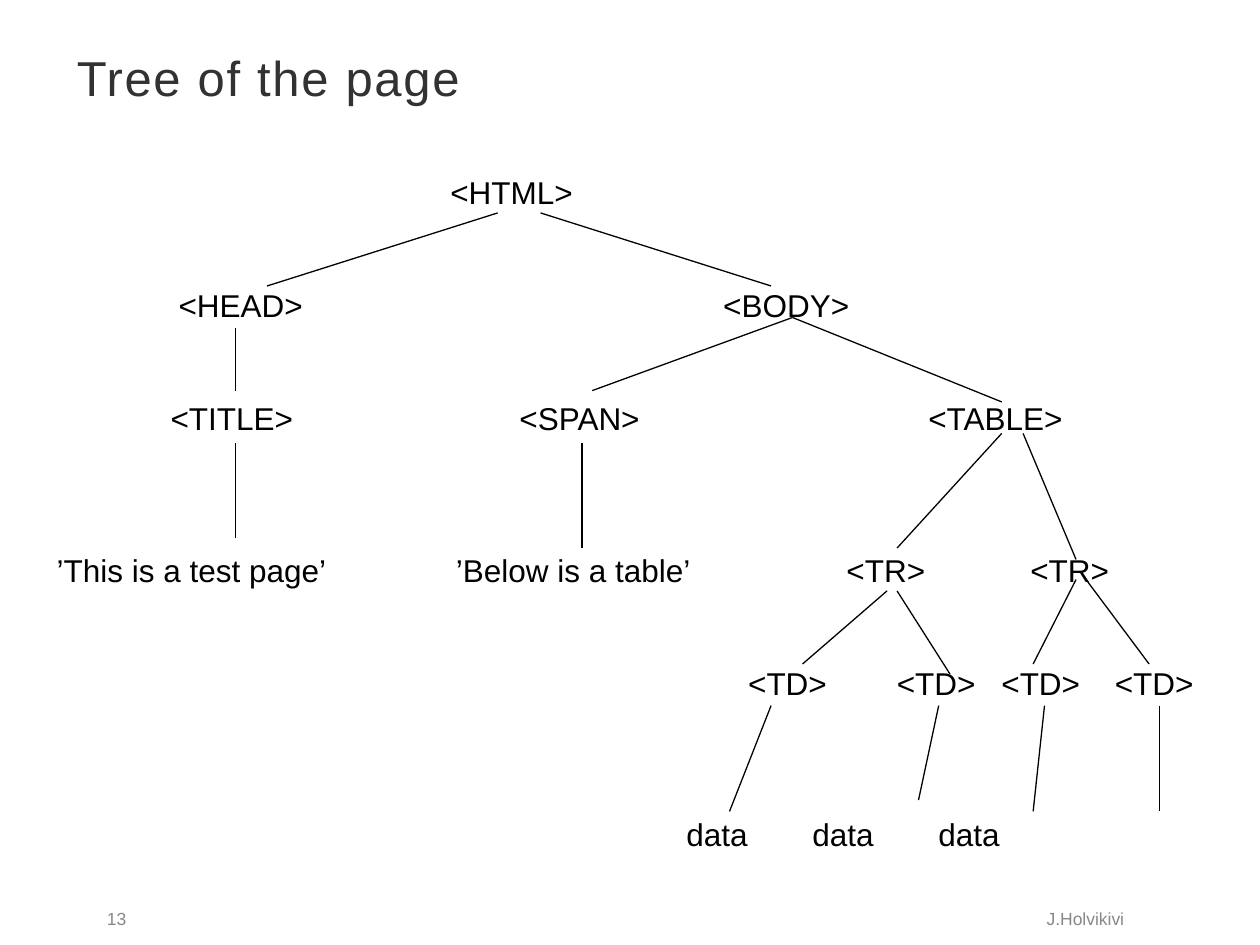
from pptx import Presentation
from pptx.dml.color import RGBColor
from pptx.enum.shapes import MSO_CONNECTOR
from pptx.enum.text import MSO_ANCHOR, PP_ALIGN
from pptx.oxml.ns import qn
from pptx.util import Inches, Pt
from lxml import etree


def paint(hue):
    """Turn a hex string into a colour."""
    return RGBColor.from_string(hue)


def write(box, text, size, hue, align):
    frame = box.text_frame
    frame.text = text
    frame.word_wrap = True
    para = frame.paragraphs[0]
    para.alignment = align
    para.font.name = "Arial"
    para.font.size = Pt(size)
    para.font.color.rgb = paint(hue)
    return frame


deck = Presentation()
deck.slide_width, deck.slide_height = Inches(10), Inches(7.5)
slide = deck.slides.add_slide(deck.slide_layouts[5])
shapes = slide.shapes

# Title
title = shapes.title
title.left, title.top = Inches(0.51), Inches(0.28)
title.width, title.height = Inches(9), Inches(1.25)
frame = write(title, "Tree of the page", 28, "323232", PP_ALIGN.LEFT)
frame.vertical_anchor = MSO_ANCHOR.TOP
frame.margin_top = Inches(0.1)
frame.paragraphs[0].runs[0].font._element.set("spc", "100")

# Footer
for text, left, width, align in [
    ("13", 0.75, 1.67, PP_ALIGN.LEFT),
    ("J.Holvikivi", 7.42, 1.6, PP_ALIGN.RIGHT),
]:
    box = shapes.add_textbox(Inches(left), Inches(7.16), Inches(width), Inches(0.34))
    write(box, text, 10, "878989", align)

# Tree levels: middle height, then each label with its centre
levels = [
    (1.52, [("<HTML>", 4.06)]),
    (2.42, [("<HEAD>", 1.91), ("<BODY>", 6.24)]),
    (3.32, [("<TITLE>", 1.84), ("<SPAN>", 4.6), ("<TABLE>", 7.9)]),
    (4.52, [("’This is a test page’", 1.52), ("’Below is a table’", 4.55),
            ("<TR>", 7.03), ("<TR>", 8.49)]),
    (5.42, [("<TD>", 6.25), ("<TD>", 7.43), ("<TD>", 8.26), ("<TD>", 9.16)]),
    (6.62, [("data", 5.69), ("data", 6.69), ("data", 7.69)]),
]
high = 0.3
for mid, nodes in levels:
    for text, centre in nodes:
        wide = 0.13 * len(text) + 0.3
        box = shapes.add_textbox(Inches(centre - wide / 2), Inches(mid - high / 2),
                                 Inches(wide), Inches(high))
        frame = write(box, text, 18, "000000", PP_ALIGN.CENTER)
        frame.vertical_anchor = MSO_ANCHOR.MIDDLE
        frame.margin_left = frame.margin_right = 0
        frame.margin_top = frame.margin_bottom = 0

# Branches: x and y of the upper end, then of the lower end
branches = [
    (3.95, 1.69, 2.12, 2.27), (4.29, 1.69, 6.12, 2.27),
    (1.87, 2.6, 1.87, 3.1), (1.87, 3.52, 1.87, 4.27),
    (6.29, 2.52, 4.7, 3.1), (6.29, 2.52, 7.95, 3.19),
    (4.62, 3.52, 4.62, 4.35),
    (7.95, 3.44, 7.12, 4.35), (8.12, 3.44, 8.54, 4.44),
    (7.04, 4.69, 6.37, 5.27), (7.12, 4.69, 7.54, 5.35),
    (8.54, 4.6, 8.2, 5.27), (8.62, 4.6, 9.12, 5.27),
    (6.12, 5.6, 5.79, 6.44), (7.45, 5.6, 7.29, 6.35),
    (8.29, 5.6, 8.2, 6.44), (9.2, 5.6, 9.2, 6.44),
]
for ends in branches:
    line = shapes.add_connector(MSO_CONNECTOR.STRAIGHT, *map(Inches, ends))
    line.line.color.rgb = paint("000000")
    line.line.width = Pt(0.75)
    etree.SubElement(line._element.spPr, qn("a:effectLst"))

deck.save("out.pptx")
